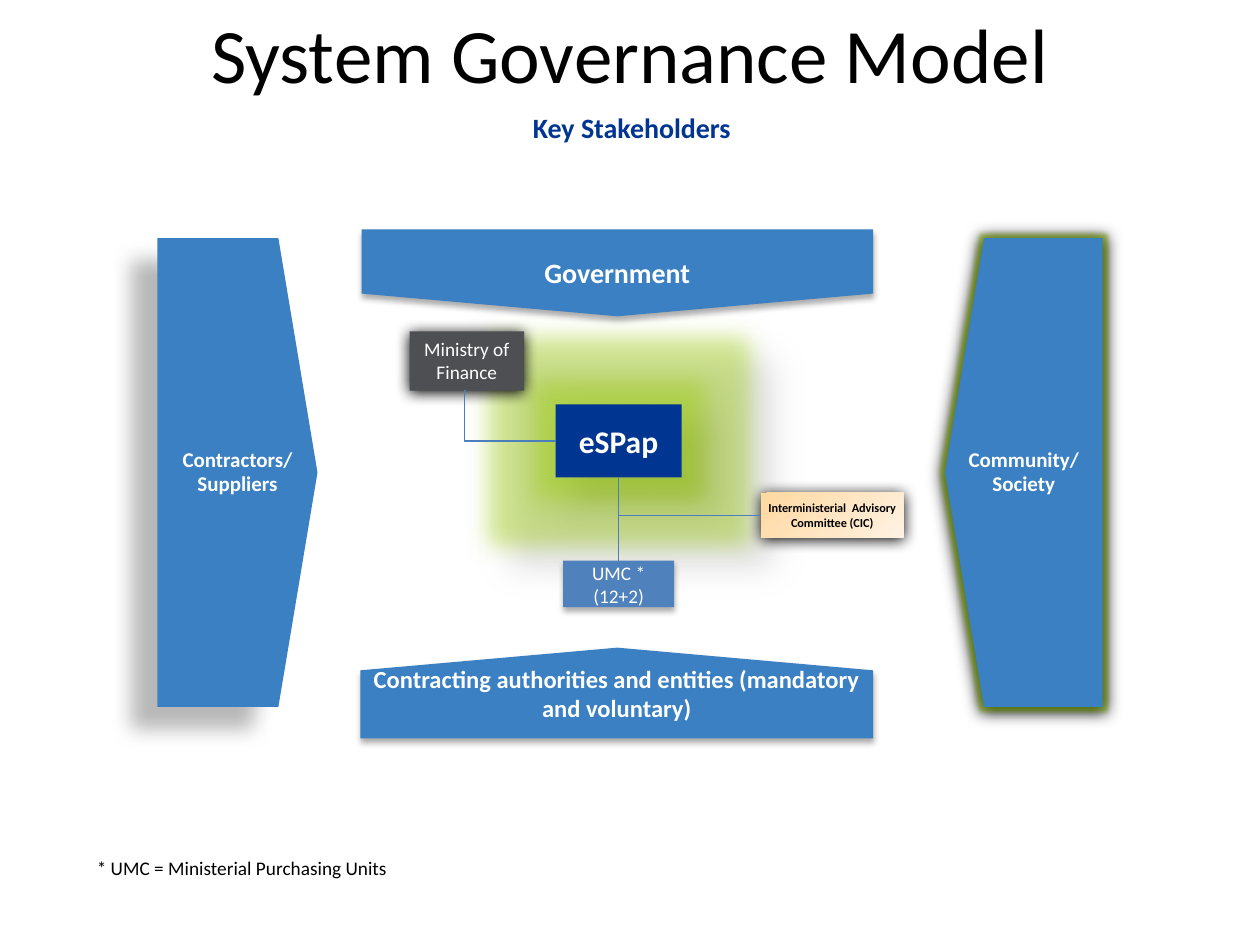
from dataclasses import dataclass
from typing import Optional

from lxml import etree
from pptx import Presentation
from pptx.dml.color import RGBColor
from pptx.enum import shapes, text
from pptx.oxml import ns
from pptx.util import Inches, Pt

FONT = "Calibri"
COLORS = {
    "black": "000000", "white": "FFFFFF", "panel": "3B80C2", "navy": "003591",
    "gray": "4D4F53", "blue": "4F81BD", "line": "4B7EBC", "sand": "FFD8A0",
    "cream": "FFF2E3", "lime": "99CC00", "olive": "6F9A00",
}


@dataclass(frozen=True)
class Shadow:
    alpha: int
    blur: float
    distance: float
    angle: int


@dataclass(frozen=True)
class Glow:
    color: str
    alpha: int
    radius: float


@dataclass(frozen=True)
class Style:
    size: float
    color: str = "white"
    bold: bool = True
    align: text.PP_ALIGN = text.PP_ALIGN.CENTER
    spacing: Optional[float] = None


@dataclass(frozen=True)
class Panel:
    lines: tuple
    points: tuple
    style: Style
    shadow: Shadow
    glow: Optional[Glow] = None


@dataclass(frozen=True)
class Box:
    label: str
    at: tuple
    fills: tuple
    style: Style
    shadow: Shadow
    glow: Optional[Glow] = None
    anchor: text.MSO_ANCHOR = text.MSO_ANCHOR.MIDDLE
    margin: Optional[float] = None


SOFT = Shadow(32, 3.5, 2.2, 90)
DARK = Shadow(100, 8.5, 1, 90)
SIDE = Style(12, spacing=0.95)
SMALL = Style(11, bold=False)

PANELS = [
    Panel(("Community/", "Society"),
          ((7.81, 1.89), (8.75, 1.89), (8.75, 5.61), (7.81, 5.61), (7.5, 3.75)),
          SIDE, DARK, Glow("olive", 60, 5)),
    Panel(("Contractors/", "Suppliers"),
          ((2.21, 1.89), (1.25, 1.89), (1.25, 5.61), (2.21, 5.61), (2.52, 3.75)),
          SIDE, Shadow(28, 11.8, 19.7, 141)),
    Panel(("Government",),
          ((2.87, 2.33), (2.87, 1.82), (6.93, 1.82), (6.93, 2.33), (4.9, 2.51)),
          Style(16), SOFT),
    Panel(("Contracting authorities and entities (mandatory and voluntary)",),
          ((6.93, 5.32), (6.93, 5.86), (2.86, 5.86), (2.86, 5.32), (4.9, 5.14)),
          Style(14), SOFT),
]
AGENCY = Box("eSPap", (4.41, 3.21, 1, 0.58), ("navy",), Style(18),
             Shadow(30, 15, 18, 45), Glow("lime", 40, 26))
COMMITTEE = Box("Interministerial  Advisory Committee (CIC)", (6.04, 3.91, 1.13, 0.36),
                ("sand", "cream"), Style(7, "black"), DARK, margin=0)
MINISTRY = Box("Ministry of Finance", (3.25, 2.63, 0.91, 0.47), ("gray",), SMALL,
               DARK, anchor=text.MSO_ANCHOR.TOP)
UNITS = Box("UMC * (12+2)", (4.47, 4.45, 0.88, 0.37), ("blue",), SMALL, SOFT)


def rgb(name: str) -> RGBColor:
    return RGBColor.from_string(COLORS[name])


def write(frame, lines: tuple, style: Style) -> None:
    for index, line in enumerate(lines):
        paragraph = frame.add_paragraph() if index else frame.paragraphs[0]
        paragraph.alignment = style.align
        if style.spacing:
            paragraph.line_spacing = style.spacing
        run = paragraph.add_run()
        run.text = line
        run.font.name, run.font.size, run.font.bold = FONT, Pt(style.size), style.bold
        run.font.color.rgb = rgb(style.color)


def add_effect(effects, tag: str, color: str, alpha: int, **attributes) -> None:
    effect = etree.SubElement(effects, ns.qn(tag), {k: str(v) for k, v in attributes.items()})
    fill = etree.SubElement(effect, ns.qn("a:srgbClr"), val=COLORS[color])
    etree.SubElement(fill, ns.qn("a:alpha"), val=str(alpha * 1000))


def finish(shape, item) -> None:
    """Remove the outline and add the glow and shadow."""
    shape.line.fill.background()
    shape.shadow.inherit = False
    effects = shape._element.spPr.find(ns.qn("a:effectLst"))
    if item.glow:
        add_effect(effects, "a:glow", item.glow.color, item.glow.alpha,
                   rad=Pt(item.glow.radius))
    shadow = item.shadow
    add_effect(effects, "a:outerShdw", "black", shadow.alpha, blurRad=Pt(shadow.blur),
               dist=Pt(shadow.distance), dir=shadow.angle * 60000, rotWithShape=0)


def draw_panel(slide, panel: Panel):
    points = [(Inches(x), Inches(y)) for x, y in panel.points]
    builder = slide.shapes.build_freeform(*points[0])
    builder.add_line_segments(points[1:], close=True)
    shape = builder.convert_to_shape()
    shape.fill.solid()
    shape.fill.fore_color.rgb = rgb("panel")
    finish(shape, panel)
    shape.text_frame.word_wrap = True
    shape.text_frame.vertical_anchor = text.MSO_ANCHOR.MIDDLE
    write(shape.text_frame, panel.lines, panel.style)
    return shape


def draw_box(slide, box: Box):
    shape = slide.shapes.add_shape(shapes.MSO_SHAPE.RECTANGLE, *map(Inches, box.at))
    if len(box.fills) > 1:
        shape.fill.gradient()
        shape.fill.gradient_angle = 315
        for stop, color in zip(shape.fill.gradient_stops, box.fills):
            stop.color.rgb = rgb(color)
    else:
        shape.fill.solid()
        shape.fill.fore_color.rgb = rgb(box.fills[0])
    finish(shape, box)
    frame = shape.text_frame
    frame.word_wrap = True
    frame.vertical_anchor = box.anchor
    if box.margin is not None:
        frame.margin_left = frame.margin_right = Inches(box.margin)
        frame.margin_top = frame.margin_bottom = Inches(box.margin)
    write(frame, (box.label,), box.style)
    return shape


def draw_line(slide, kind: shapes.MSO_CONNECTOR, start: tuple, end: tuple):
    connector = slide.shapes.add_connector(kind, *map(Inches, start + end))
    connector.line.color.rgb = rgb("line")
    connector.line.width = Pt(0.75)
    etree.SubElement(connector._element.spPr, ns.qn("a:effectLst"))
    return connector


def draw_text(slide, content: str, at: tuple, style: Style, wrap: bool) -> None:
    frame = slide.shapes.add_textbox(*map(Inches, at)).text_frame
    frame.word_wrap = wrap
    write(frame, (content,), style)


def main() -> None:
    presentation = Presentation()
    presentation.slide_width, presentation.slide_height = Inches(10), Inches(7.5)
    slide = presentation.slides.add_slide(presentation.slide_layouts[5])

    # Title
    title = slide.shapes.title
    title.left, title.top, title.width, title.height = map(Inches, (0, 0, 10, 0.84))
    title.text_frame.vertical_anchor = text.MSO_ANCHOR.MIDDLE
    write(title.text_frame, ("System Governance Model",), Style(44, "black", False))

    # Stakeholder panels and the bodies between them
    for panel in PANELS:
        draw_panel(slide, panel)
    agency, committee, _, units = [
        draw_box(slide, box) for box in (AGENCY, COMMITTEE, MINISTRY, UNITS)]

    # Connectors
    elbow = draw_line(slide, shapes.MSO_CONNECTOR.ELBOW, (3.7, 3.1), (4.41, 3.5))
    guides = elbow._element.spPr.find(ns.qn("a:prstGeom")).get_or_add_avLst()
    etree.SubElement(guides, ns.qn("a:gd"), name="adj1", fmla="val -2300")
    trunk = draw_line(slide, shapes.MSO_CONNECTOR.STRAIGHT, (4.91, 3.79), (4.91, 4.45))
    trunk.begin_connect(agency, 2)
    trunk.end_connect(units, 0)
    branch = draw_line(slide, shapes.MSO_CONNECTOR.STRAIGHT, (6.04, 4.09), (4.91, 4.09))
    branch.begin_connect(committee, 1)

    # Subtitle and footnote
    draw_text(slide, "Key Stakeholders", (0.22, 0.83, 9.59, 0.37), Style(16, "navy"), True)
    draw_text(slide, "* UMC = Ministerial Purchasing Units", (0.67, 6.75, 2.74, 0.29),
              Style(11, "black", False, text.PP_ALIGN.LEFT), False)
    presentation.save("out.pptx")


if __name__ == "__main__":
    main()
